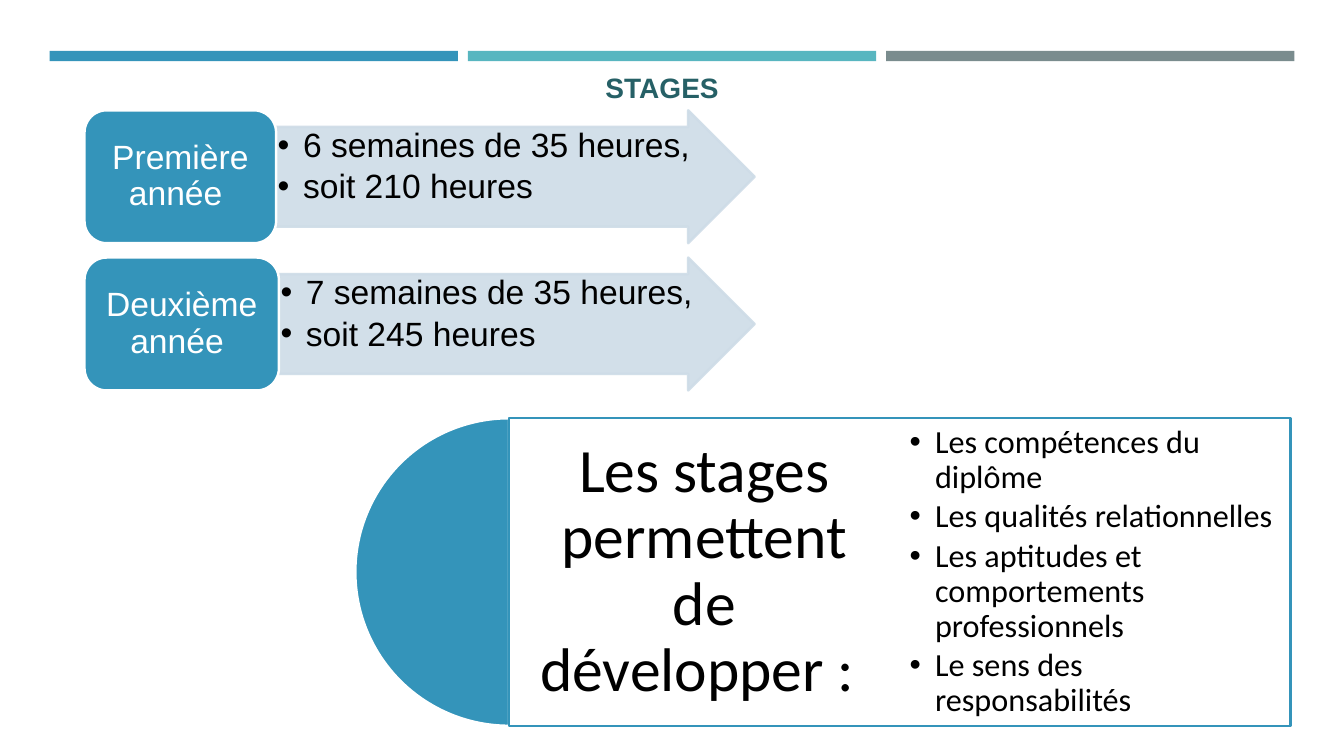
from pptx import Presentation
from pptx.dml.color import RGBColor
from pptx.enum import shapes, text
from pptx.oxml import ns
from pptx.util import Cm, Pt
from lxml import etree

BLUE = RGBColor(0x34, 0x94, 0xBA)
TEAL = RGBColor(0x58, 0xB6, 0xC0)
GREY = RGBColor(0x7A, 0x8C, 0x8E)
PALE = RGBColor(0xCE, 0xDC, 0xE7)
DARK_TEAL = RGBColor(0x26, 0x60, 0x66)
WHITE = RGBColor(0xFF, 0xFF, 0xFF)
BLACK = RGBColor(0, 0, 0)

TITLE = "STAGES"
BAR_COLORS = [BLUE, TEAL, GREY]
# label, label width in cm, details
YEARS = [
    ("Première année ", 4.83, ["6 semaines de 35 heures,", "soit 210 heures"]),
    ("Deuxième année ", 4.9, ["7 semaines de 35 heures,", "soit 245 heures"]),
]
GOAL = "Les stages permettent de développer : "
SKILLS = [
    "Les compétences du diplôme",
    "Les qualités relationnelles",
    "Les aptitudes et comportements professionnels",
    "Le sens des responsabilités",
]

# Lengths in cm
BAR_LEFT, BAR_TOP, BAR_WIDTH, BAR_HEIGHT, BAR_STEP = 1.25, 1.28, 10.29, 0.26, 10.54
YEAR_LEFT, YEAR_TOP, YEAR_HEIGHT, YEAR_STEP = 2.13, 2.78, 3.35, 3.71
ARROW_RIGHT = 19.02
PANEL_LEFT, PANEL_TOP, PANEL_WIDTH, PANEL_HEIGHT = 12.83, 10.54, 19.69, 7.75
COLUMN_WIDTH = PANEL_WIDTH / 2


def set_alpha(color_format_parent, percent):
    """Make every solid colour below the given element partly transparent."""
    for color in color_format_parent.iter(ns.qn("a:srgbClr")):
        alpha = etree.SubElement(color, ns.qn("a:alpha"))
        alpha.set("val", str(percent * 1000))


def add_box(slide, kind, left, top, width, height, fill, line=None):
    shape = slide.shapes.add_shape(kind, Cm(left), Cm(top), Cm(width), Cm(height))
    shape.shadow.inherit = False
    shape.fill.solid()
    shape.fill.fore_color.rgb = fill
    if line is None:
        shape.line.fill.background()
    else:
        shape.line.color.rgb = line
        shape.line.width = Pt(1.75)
    return shape


def add_bullet(paragraph):
    properties = paragraph._p.get_or_add_pPr()
    properties.set("marL", str(Cm(0.64)))
    properties.set("indent", str(-Cm(0.64)))
    etree.SubElement(properties, ns.qn("a:buFont")).set("typeface", "Arial")
    etree.SubElement(properties, ns.qn("a:buChar")).set("char", "•")


def write(shape, lines, font, size, color, inset=None, bullets=False, anchor=text.MSO_ANCHOR.MIDDLE):
    frame = shape.text_frame
    frame.word_wrap = True
    frame.vertical_anchor = anchor
    if inset is not None:
        frame.margin_left = frame.margin_right = Cm(inset)
        frame.margin_top = frame.margin_bottom = Cm(inset)
    frame.text = "\n".join(lines)
    for paragraph in frame.paragraphs:
        paragraph.alignment = text.PP_ALIGN.LEFT if bullets else text.PP_ALIGN.CENTER
        paragraph.line_spacing = 0.9
        paragraph.space_after = Pt(size * (0.15 if bullets else 0.35))
        if bullets:
            add_bullet(paragraph)
        for run in paragraph.runs:
            run.font.name = font
            run.font.size = Pt(size)
            run.font.color.rgb = color


def add_title(slide):
    title = slide.shapes.title
    title.left, title.top, title.width, title.height = Cm(2.97), Cm(1.65), Cm(27.43), Cm(1.12)
    write(title, [TITLE], "Arial", 20, DARK_TEAL)
    title.text_frame.auto_size = text.MSO_AUTO_SIZE.NONE
    paragraph = title.text_frame.paragraphs[0]
    paragraph.line_spacing = 1.0
    paragraph.space_after = Pt(0)
    paragraph.runs[0].font.bold = True


def add_year(slide, index, label, label_width, details):
    top = YEAR_TOP + index * YEAR_STEP
    arrow_left = YEAR_LEFT + label_width
    arrow = add_box(slide, shapes.MSO_SHAPE.RIGHT_ARROW, arrow_left, top,
                    ARROW_RIGHT - arrow_left, YEAR_HEIGHT, PALE, PALE)
    arrow.adjustments[0] = 0.75
    arrow.adjustments[1] = 0.5
    set_alpha(arrow._element.spPr, 90)
    write(arrow, details, "Arial", 24, BLACK, 0.04, True, text.MSO_ANCHOR.TOP)
    box = add_box(slide, shapes.MSO_SHAPE.ROUNDED_RECTANGLE, YEAR_LEFT, top,
                  label_width, YEAR_HEIGHT, BLUE, WHITE)
    write(box, [label], "Arial", 24, WHITE)


def add_goal_panel(slide):
    half_disc = add_box(slide, shapes.MSO_SHAPE.PIE, PANEL_LEFT - PANEL_HEIGHT / 2, PANEL_TOP,
                        PANEL_HEIGHT, PANEL_HEIGHT, BLUE, WHITE)
    # Angles of 90 and 270 degrees
    half_disc.adjustments[0] = 54
    half_disc.adjustments[1] = 162
    panel = add_box(slide, shapes.MSO_SHAPE.RECTANGLE, PANEL_LEFT, PANEL_TOP,
                    PANEL_WIDTH, PANEL_HEIGHT, WHITE, BLUE)
    set_alpha(panel.fill._xPr.find(ns.qn("a:solidFill")), 90)
    columns = [([GOAL], 44, 0.46, False), (SKILLS, 23, 0.25, True)]
    for index, (lines, size, inset, bullets) in enumerate(columns):
        column = slide.shapes.add_textbox(Cm(PANEL_LEFT + index * COLUMN_WIDTH), Cm(PANEL_TOP),
                                          Cm(COLUMN_WIDTH), Cm(PANEL_HEIGHT))
        write(column, lines, "Calibri", size, BLACK, inset, bullets)


def main():
    presentation = Presentation()
    presentation.slide_width, presentation.slide_height = Cm(33.87), Cm(19.05)
    slide = presentation.slides.add_slide(presentation.slide_layouts[5])
    for index, color in enumerate(BAR_COLORS):
        add_box(slide, shapes.MSO_SHAPE.RECTANGLE, BAR_LEFT + index * BAR_STEP, BAR_TOP,
                BAR_WIDTH, BAR_HEIGHT, color)
    add_goal_panel(slide)
    add_title(slide)
    for index, year in enumerate(YEARS):
        add_year(slide, index, *year)
    presentation.save("out.pptx")


if __name__ == "__main__":
    main()
